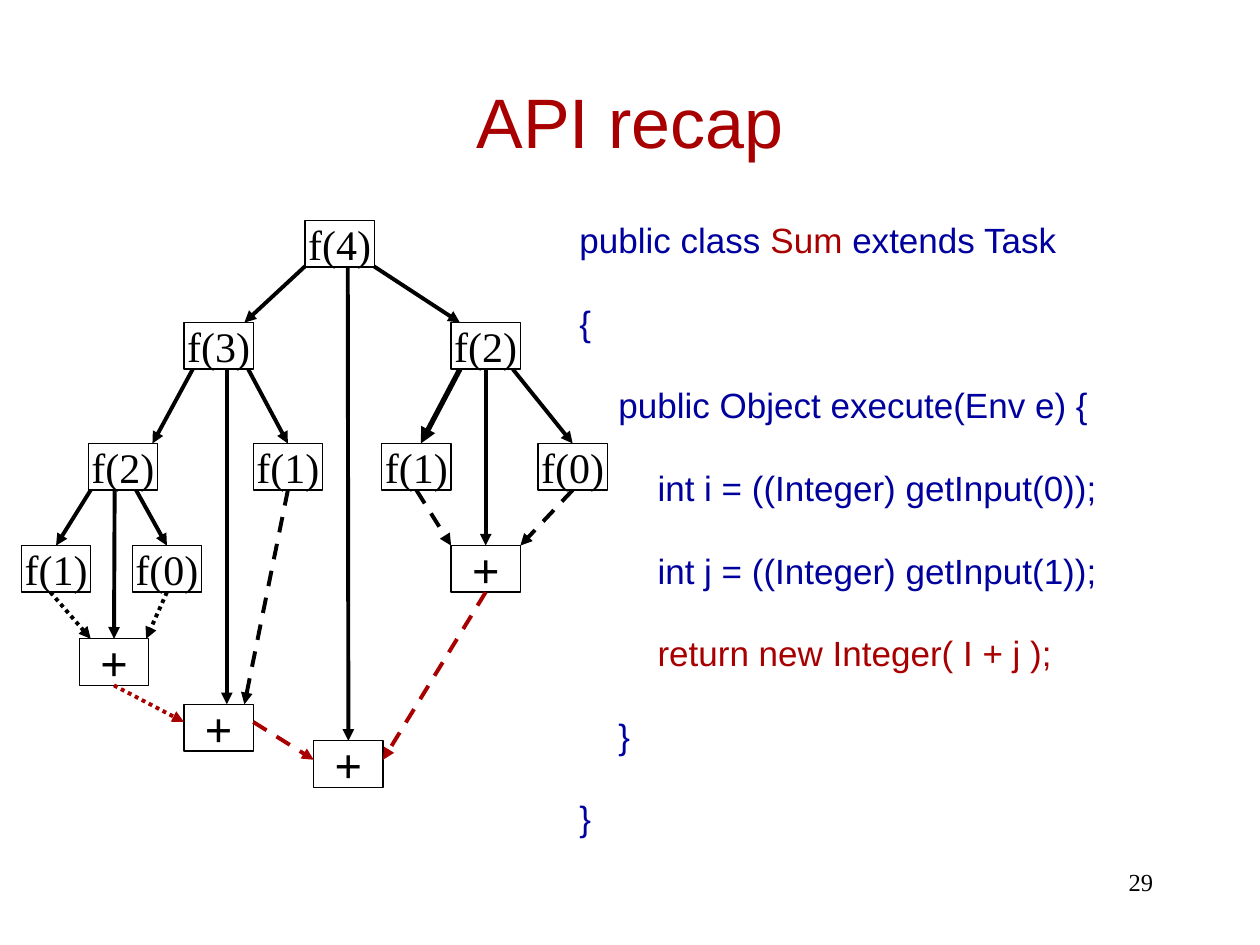
from dataclasses import dataclass

from lxml import etree
from pptx import Presentation
from pptx import util as u
from pptx.dml.color import RGBColor
from pptx.enum import dml, shapes, text
from pptx.oxml import ns

BLACK, WHITE, RED, BLUE = "000000", "FFFFFF", "A80000", "00009F"
SERIF, SANS = "Times New Roman", "Arial"
DASH, DOT = dml.MSO_LINE.DASH, dml.MSO_LINE.ROUND_DOT
BOX_W, BOX_H = 0.55, 0.37
MID = BOX_W / 2

# Middles of a box's sides, by connection site
SITES = {(MID, 0): 0, (0, BOX_H / 2): 1, (MID, BOX_H): 2, (BOX_W, BOX_H / 2): 3}


@dataclass(frozen=True)
class Node:
    label: str
    x: float
    y: float


@dataclass(frozen=True)
class Edge:
    """An arrow between two boxes; start and end are offsets inside them."""
    src: str
    dst: str
    start: tuple[float, float] = (MID, BOX_H)
    end: tuple[float, float] = (MID, 0)
    color: str = BLACK
    dash: dml.MSO_LINE | None = None
    width: float = 2.25


@dataclass(frozen=True)
class CodeLine:
    level: int
    runs: list[tuple[str, str]]


NODES = {
    "f3": Node("f(3)", 1.46, 2.56),
    "f2 right": Node("f(2)", 3.58, 2.56),
    "f2 left": Node("f(2)", 0.7, 3.52),
    "f1 middle": Node("f(1)", 2.01, 3.52),
    "f1 right": Node("f(1)", 3.03, 3.52),
    "f0 right": Node("f(0)", 4.27, 3.52),
    "f1 left": Node("f(1)", 0.17, 4.33),
    "f0 left": Node("f(0)", 1.05, 4.33),
    "sum2 right": Node("+", 3.58, 4.33),
    "sum2 left": Node("+", 0.63, 5.07),
    "sum3": Node("+", 1.46, 5.59),
    "sum4": Node("+", 2.49, 5.88),
    "f4": Node("f(4)", 2.42, 1.75),
}

EDGES = [
    # Calls and their sums
    Edge("f4", "sum4", (0.34, 0.3)),
    Edge("f4", "f3", (0.07, 0.3), (0.48, 0)),
    Edge("f4", "f2 right", (0.45, 0.3), (0.07, 0)),
    Edge("f3", "sum3", (0.34, BOX_H), (0.34, 0)),
    Edge("f3", "f2 left", (0.07, BOX_H), (0.51, 0)),
    Edge("f3", "f1 middle", (0.51, BOX_H)),
    Edge("f2 right", "sum2 right"),
    Edge("f2 right", "f0 right", (0.49, BOX_H)),
    Edge("f2 right", "f1 right", (0.07, BOX_H), (0.31, 0), width=3),
    Edge("f2 left", "sum2 left", (0.21, BOX_H)),
    Edge("f2 left", "f1 left", (0.02, BOX_H)),
    Edge("f2 left", "f0 left", (0.38, BOX_H)),
    # Results passed on to the sums
    Edge("f0 right", "sum2 right", end=(BOX_W, 0), dash=DASH),
    Edge("f1 right", "sum2 right", end=(0, 0), dash=DASH),
    Edge("f1 middle", "sum3", end=(0.48, 0), dash=DASH),
    Edge("f0 left", "sum2 left", end=(0.53, 0), dash=DOT),
    Edge("f1 left", "sum2 left", (0.23, BOX_H), (0.09, 0), dash=DOT),
    Edge("sum2 left", "sum3", end=(0, 0.14), color=RED, dash=DOT),
    Edge("sum3", "sum4", (BOX_W, 0.14), (0, 0.15), RED, DASH),
    Edge("sum2 right", "sum4", end=(BOX_W, 0.15), color=RED, dash=DASH),
]

CODE = [
    CodeLine(0, [("public class ", BLUE), ("Sum", RED), (" extends Task", BLUE)]),
    CodeLine(0, [("{", BLUE)]),
    CodeLine(1, [("public Object execute(Env e) {", BLUE)]),
    CodeLine(2, [("int i = ((Integer) getInput(0));", BLUE)]),
    CodeLine(2, [("int j = ((Integer) getInput(1));", BLUE)]),
    CodeLine(2, [("return new Integer( I + j );", RED)]),
    CodeLine(1, [("}", BLUE)]),
    CodeLine(0, [("}", BLUE)]),
]


def rgb(color: str) -> RGBColor:
    return RGBColor.from_string(color)


def add_run(p, words: str, color: str, **font) -> None:
    r = p.add_run()
    r.text = words
    r.font.color.rgb = rgb(color)
    for name, value in font.items():
        setattr(r.font, name, value)


def add_text_box(s, x: float, y: float, w: float, h: float):
    tf = s.shapes.add_textbox(*map(u.Inches, (x, y, w, h))).text_frame
    tf.word_wrap = True
    return tf


def add_node(s, node: Node):
    sp = s.shapes.add_shape(shapes.MSO_SHAPE.RECTANGLE,
                            *map(u.Inches, (node.x, node.y, BOX_W, BOX_H)))
    sp.shadow.inherit = False
    sp.fill.solid()
    sp.fill.fore_color.rgb = rgb(WHITE)
    sp.line.color.rgb = rgb(BLACK)
    sp.line.width = u.Pt(0.75)
    tf = sp.text_frame
    tf.word_wrap = False
    tf.vertical_anchor = text.MSO_ANCHOR.MIDDLE
    p = tf.paragraphs[0]
    p.alignment = text.PP_ALIGN.CENTER
    is_sum = node.label == "+"
    add_run(p, node.label, BLACK, name=SERIF, size=u.Pt(28 if is_sum else 24), bold=is_sum)
    return sp


def add_edge(s, edge: Edge, boxes: dict) -> None:
    a, b = NODES[edge.src], NODES[edge.dst]
    ends = (a.x + edge.start[0], a.y + edge.start[1], b.x + edge.end[0], b.y + edge.end[1])
    line = s.shapes.add_connector(shapes.MSO_CONNECTOR.STRAIGHT, *map(u.Inches, ends))
    if edge.start in SITES and edge.src in boxes:
        line.begin_connect(boxes[edge.src], SITES[edge.start])
    if edge.end in SITES:
        line.end_connect(boxes[edge.dst], SITES[edge.end])
    line.line.color.rgb = rgb(edge.color)
    line.line.width = u.Pt(edge.width)
    if edge.dash is not None:
        line.line.dash_style = edge.dash
    props = line.line._get_or_add_ln()
    etree.SubElement(props, ns.qn("a:tailEnd"), type="triangle")
    etree.SubElement(line._element.spPr, ns.qn("a:effectLst"))


def add_code(tf) -> None:
    for i, code in enumerate(CODE):
        p = tf.add_paragraph() if i else tf.paragraphs[0]
        p.line_spacing = 1.8
        props = p._p.get_or_add_pPr()
        props.set("marL", str(u.Inches(0.31 * code.level)))
        before = etree.SubElement(props, ns.qn("a:spcBef"))
        etree.SubElement(before, ns.qn("a:spcPct"), val="20000")
        for words, color in code.runs:
            add_run(p, words, color, name=SANS, size=u.Pt(20))


def main() -> None:
    prs = Presentation()
    prs.slide_width, prs.slide_height = u.Inches(10), u.Inches(7.5)
    s = prs.slides.add_slide(prs.slide_layouts[6])

    # Page number
    p = add_text_box(s, 7.17, 6.83, 2.08, 0.5).paragraphs[0]
    p.alignment = text.PP_ALIGN.RIGHT
    add_run(p, "29", BLACK, name=SERIF, size=u.Pt(14))

    # Title
    tf = add_text_box(s, 0.75, 0.33, 8.5, 1.25)
    tf.vertical_anchor = text.MSO_ANCHOR.MIDDLE
    tf.paragraphs[0].alignment = text.PP_ALIGN.CENTER
    add_run(tf.paragraphs[0], "API recap", RED, name=SANS, size=u.Pt(40))

    # Code listing
    add_code(add_text_box(s, 4.5, 1.42, 5.25, 5.33))

    # Call tree: the root goes last, over the starts of its arrows
    boxes = {name: add_node(s, node) for name, node in NODES.items() if name != "f4"}
    for edge in EDGES:
        add_edge(s, edge, boxes)
    add_node(s, NODES["f4"])

    prs.save("out.pptx")


if __name__ == "__main__":
    main()
